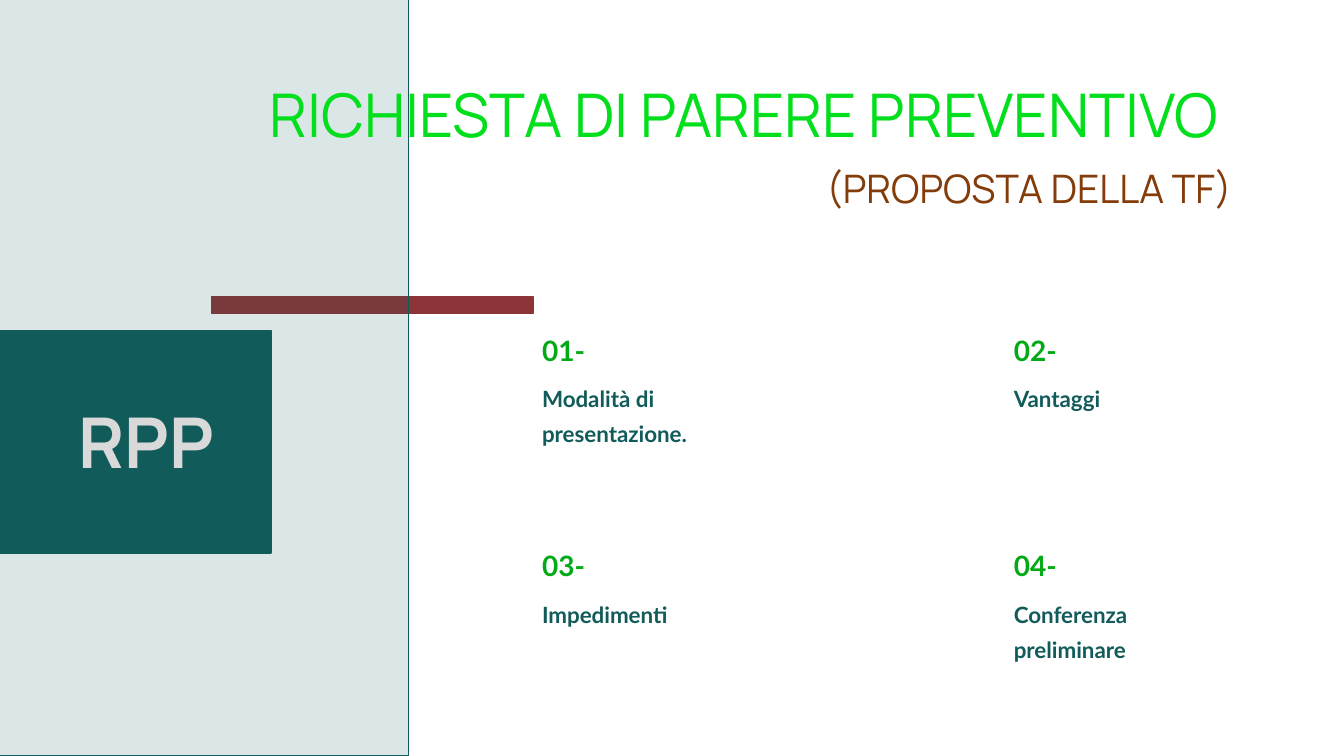
from dataclasses import dataclass

import pptx
import pptx.dml.color
import pptx.enum.shapes
import pptx.enum.text
import pptx.oxml.ns
import pptx.util
from lxml import etree

Cm = pptx.util.Cm
Pt = pptx.util.Pt
ANCHOR = pptx.enum.text.MSO_ANCHOR
ALIGN = pptx.enum.text.PP_ALIGN


@dataclass(frozen=True)
class Theme:
    teal: str = "115B5A"
    red: str = "8C3438"
    number: str = "02AA16"
    title: str = "03DF1D"
    subtitle: str = "843C0B"
    label: str = "D9D9D9"
    heading_font: str = "Manrope"
    body_font: str = "Lato"
    title_size: int = 43
    subtitle_size: int = 28
    label_size: int = 50
    number_size: int = 20
    body_size: int = 16


THEME = Theme()
TOPICS = ["Modalità di presentazione.", "Vantaggi", "Impedimenti", "Conferenza preliminare"]


def rgb(color):
    return pptx.dml.color.RGBColor.from_string(color)


def add_block(slide, box, color, line_width=1.0, opacity=None):
    """Add a rectangle; box is left, top, width, height in cm, opacity a percentage."""
    sp = slide.shapes.add_shape(pptx.enum.shapes.MSO_SHAPE.RECTANGLE, *map(Cm, box))
    sp.shadow.inherit = False
    sp.fill.solid()
    sp.fill.fore_color.rgb = rgb(color)
    sp.line.color.rgb = rgb(color)
    sp.line.width = Pt(line_width)
    if opacity is not None:
        clr = sp.fill._xPr.find(".//" + pptx.oxml.ns.qn("a:srgbClr"))
        etree.SubElement(clr, pptx.oxml.ns.qn("a:alpha"), val=str(opacity * 1000))


def add_text(slide, box, text, font, size, color, bold=False, anchor=ANCHOR.TOP,
             align=ALIGN.LEFT, spacing=None, pad=0.0):
    """Add one paragraph; pad is the inset above and below it in cm."""
    tf = slide.shapes.add_textbox(*map(Cm, box)).text_frame
    tf.word_wrap = True
    tf.vertical_anchor = anchor
    tf.margin_top = tf.margin_bottom = Cm(pad)
    p = tf.paragraphs[0]
    p.alignment = align
    if spacing is not None:
        p.line_spacing = spacing
    r = p.add_run()
    r.text = text
    r.font.name = font
    r.font.size = Pt(size)
    r.font.bold = bold
    r.font.color.rgb = rgb(color)


def add_side_panel(slide, box):
    left, top, width, height = box
    add_block(slide, (left, top + 8.33, 6.83, 5.61), THEME.teal)
    add_block(slide, (left + 5.33, top + 7.47, 8.1, 0.43), THEME.red)
    add_block(slide, box, THEME.teal, line_width=0.75, opacity=15)
    add_text(slide, (left + 1.73, top + 10.03, 4.72, 2.39), "RPP", THEME.heading_font,
             THEME.label_size, THEME.label, bold=True)


def add_heading(slide, box):
    left, top, width, height = box
    add_text(slide, (left, top, width, 2.08), "RICHIESTA DI PARERE PREVENTIVO",
             THEME.heading_font, THEME.title_size, THEME.title, anchor=ANCHOR.BOTTOM)
    add_text(slide, (left + 0.59, top + height - 1.45, 24.15, 1.45), "(PROPOSTA DELLA TF)",
             THEME.heading_font, THEME.subtitle_size, THEME.subtitle,
             anchor=ANCHOR.BOTTOM, align=ALIGN.RIGHT)


def add_topic(slide, box, number, topic):
    left, top, width, height = box
    number_height = 1.73
    add_text(slide, (left, top, width, number_height), f"{number:02d}-", THEME.body_font,
             THEME.number_size, THEME.number, bold=True, anchor=ANCHOR.BOTTOM,
             spacing=Pt(50), pad=0.13)
    add_text(slide, (left, top + number_height, width, height - number_height), topic,
             THEME.body_font, THEME.body_size, THEME.teal, bold=True, spacing=1.3, pad=0.13)


def add_topic_grid(slide, box, columns=2):
    left, top, width, height = box
    cell_width, cell_height = 5.87, 3.66
    rows = -(-len(TOPICS) // columns)
    step_x = (width - cell_width) / (columns - 1)
    step_y = (height - cell_height) / (rows - 1)
    for i, topic in enumerate(TOPICS):
        row, column = divmod(i, columns)
        cell = (left + column * step_x, top + row * step_y, cell_width, cell_height)
        add_topic(slide, cell, i + 1, topic)


def main():
    prs = pptx.Presentation()
    prs.slide_width, prs.slide_height = Cm(33.87), Cm(19.05)
    slide = prs.slides.add_slide(prs.slide_layouts[6])
    add_side_panel(slide, (0, 0, 10.29, 19.05))
    add_heading(slide, (6.55, 1.7, 26.62, 3.63))
    add_topic_grid(slide, (13.41, 7.65, 17.76, 9.09))
    prs.save("out.pptx")


if __name__ == "__main__":
    main()
